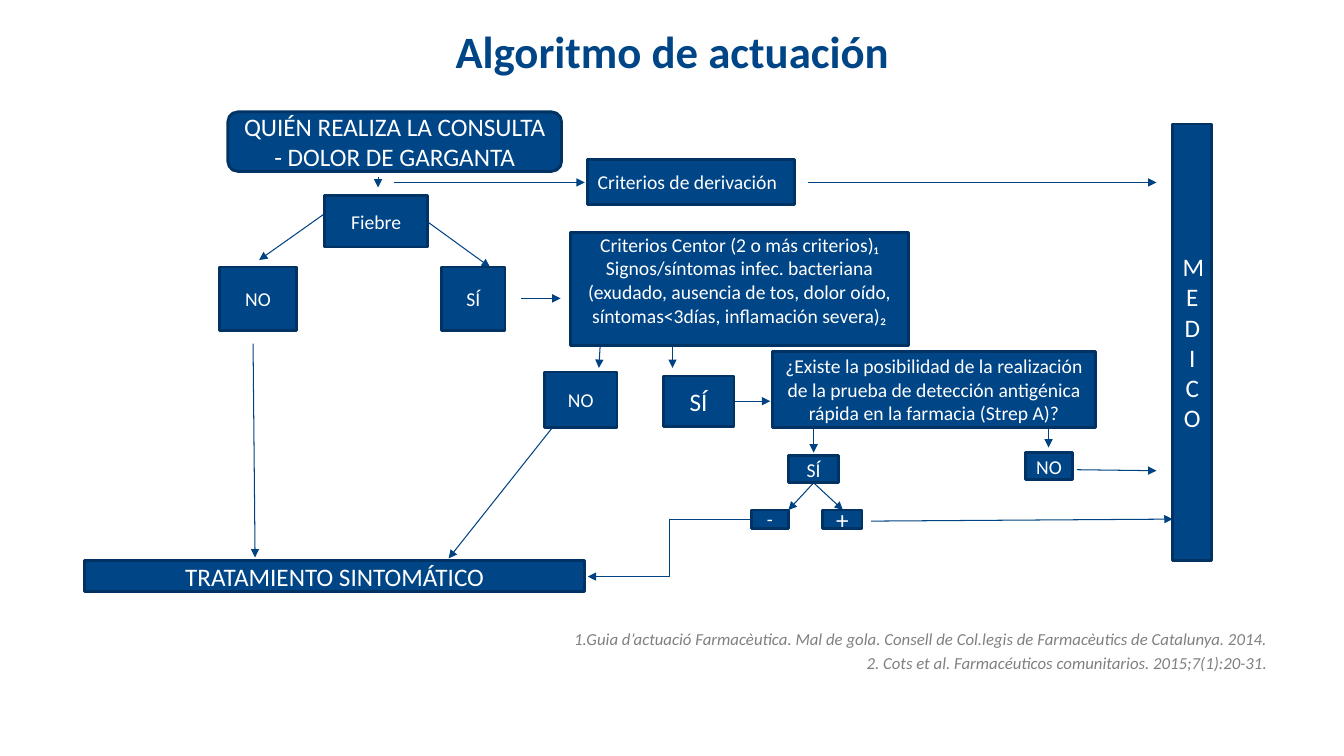
"""Build the decision-flow slide for treating a sore throat."""
import pptx
import pptx.dml.color
import pptx.enum.shapes
import pptx.enum.text
import pptx.oxml.ns
import pptx.util
from lxml import etree

SLIDE_WIDTH, SLIDE_HEIGHT = 13.33, 7.5
COLUMN, ROW = SLIDE_WIDTH / 133.3, SLIDE_HEIGHT / 75
FONT = "Calibri"
BLUE, EDGE, ARROW, WHITE, GREY = "004586", "003363", "004383", "FFFFFF", "808080"
ALIGN = pptx.enum.text.PP_ALIGN
ANCHOR = pptx.enum.text.MSO_ANCHOR
SHAPE = pptx.enum.shapes.MSO_SHAPE
CONNECTOR = pptx.enum.shapes.MSO_CONNECTOR

BOXES = [
    (22.6, 11.1, 33.1, 5.9, "QUIÉN REALIZA LA CONSULTA - DOLOR DE GARGANTA",
     {"size": 18, "kind": SHAPE.ROUNDED_RECTANGLE}),
    (32.2, 19.4, 10.2, 5.1, "Fiebre", {}),
    (58.3, 15.8, 20.5, 4.5, "Criterios de derivación", {"align": ALIGN.JUSTIFY}),
    (21.8, 26.5, 7.6, 6.3, "NO", {}),
    (43.8, 26.5, 6.3, 6.3, "SÍ", {}),
    (56.6, 23.1, 33.5, 11.2,
     "Criterios Centor (2 o más criterios)₁\n"
     "Signos/síntomas infec. bacteriana (exudado, ausencia de tos, dolor oído, "
     "síntomas<3días, inflamación severa)₂", {"anchor": ANCHOR.TOP}),
    (54, 36.9, 7.2, 5.5, "NO", {}),
    (65.8, 37.3, 7, 5, "SÍ", {"size": 18}),
    (76.6, 34.9, 32.1, 7.5,
     "¿Existe la posibilidad de la realización de la prueba de detección "
     "antigénica rápida en la farmacia (Strep A)?", {}),
    (78.2, 45.2, 5, 2.7, "SÍ", {}),
    (101.7, 44.9, 4.7, 2.7, "NO", {}),
    (74.5, 50.6, 3.7, 1.8, "-", {}),
    (81.6, 50.6, 3.9, 1.8, "+", {"size": 18}),
    (116.3, 12.3, 3.9, 43.3, "\n".join("MEDICO"), {"size": 18}),
    (8.4, 55.6, 49.6, 3.1, "TRATAMIENTO SINTOMÁTICO", {"size": 18}),
]

ARROWS = [
    (37.5, 17.6, 37.5, 18.6),
    (39.1, 18.1, 58, 18.1),
    (80.1, 18.1, 114.7, 18.1),
    (42.4, 22, 48.6, 26.5),
    (32.2, 21.2, 25.7, 25.8),
    (25.1, 34.1, 25.3, 55.3),
    (51.7, 29.6, 55.6, 29.6),
    (59.6, 33, 59.4, 36.5),
    (66.7, 33.5, 66.7, 36.5),
    (55.6, 41.4, 44.5, 55.4),
    (72.8, 39.8, 76.4, 39.8),
    (80.7, 42.4, 80.7, 44.9),
    (104, 42.3, 104, 44.4),
    (106.8, 46.6, 114.7, 46.7),
    (80.7, 47.9, 78.2, 50.6),
    (80.7, 47.9, 83.6, 50.6),
    (86.4, 51.7, 116.3, 51.5),
]


def color(value):
    """Turn a hex string into a colour."""
    return pptx.dml.color.RGBColor.from_string(value)


def grid(*lengths):
    """Turn alternating columns and rows into slide lengths."""
    return [pptx.util.Inches(length * (ROW if index % 2 else COLUMN))
            for index, length in enumerate(lengths)]


def write(shape, text, size=14, fill=WHITE, align=ALIGN.CENTER,
          anchor=ANCHOR.MIDDLE, bold=False, italic=False, gap=0):
    """Fill a shape with formatted text, one paragraph for each line."""
    frame = shape.text_frame
    frame.text = text
    frame.word_wrap = True
    frame.auto_size = pptx.enum.text.MSO_AUTO_SIZE.NONE
    frame.vertical_anchor = anchor
    for index, paragraph in enumerate(frame.paragraphs):
        properties = paragraph._p.get_or_add_pPr()
        properties.set("marL", "0")
        properties.set("indent", "0")
        etree.SubElement(properties, pptx.oxml.ns.qn("a:buNone"))
        paragraph.alignment = align
        paragraph.space_before = pptx.util.Pt(gap if index else 0)
        font = paragraph.font
        font.name, font.size = FONT, pptx.util.Pt(size)
        font.bold, font.italic = bold, italic
        font.color.rgb = color(fill)


def fill_placeholder(shape, position, text, **style):
    """Move a placeholder on the grid and write its text."""
    shape.left, shape.top, shape.width, shape.height = grid(*position)
    write(shape, text, **style)


def add_box(slide, position, text, kind=SHAPE.RECTANGLE, **style):
    """Draw one step of the flow."""
    shape = slide.shapes.add_shape(kind, *grid(*position))
    shape.shadow.inherit = False
    shape.fill.solid()
    shape.fill.fore_color.rgb = color(BLUE)
    shape.line.color.rgb = color(EDGE)
    shape.line.width = pptx.util.Pt(2)
    write(shape, text, **style)
    if style.get("anchor") == ANCHOR.TOP:
        shape.text_frame.margin_top = 0


def add_arrow(slide, position, kind=CONNECTOR.STRAIGHT):
    """Draw a thin line with an arrowhead at its end."""
    connector = slide.shapes.add_connector(kind, *grid(*position))
    connector.line.color.rgb = color(ARROW)
    connector.line.width = pptx.util.Pt(0.75)
    line = connector.line._get_or_add_ln()
    etree.SubElement(line, pptx.oxml.ns.qn("a:tailEnd"), type="triangle")
    etree.SubElement(connector._element.spPr, pptx.oxml.ns.qn("a:effectLst"))


def main():
    """Build and save the slide."""
    presentation = pptx.Presentation()
    presentation.slide_width = pptx.util.Inches(SLIDE_WIDTH)
    presentation.slide_height = pptx.util.Inches(SLIDE_HEIGHT)
    slide = presentation.slides.add_slide(presentation.slide_layouts[1])
    fill_placeholder(slide.shapes.title, (6.7, 1.7, 120, 6.6),
                     "Algoritmo de actuación", size=32, fill=BLUE, bold=True)
    fill_placeholder(
        slide.placeholders[1], (0, 61.9, 126.7, 3.2),
        "1.Guia d’actuació Farmacèutica. Mal de gola. Consell de Col.legis de "
        "Farmacèutics de Catalunya. 2014.\n"
        "2. Cots et al. Farmacéuticos comunitarios. 2015;7(1):20-31.",
        size=12, fill=GREY, italic=True, align=ALIGN.RIGHT,
        anchor=ANCHOR.TOP, gap=2.4)
    for arrow in ARROWS:
        add_arrow(slide, arrow)
    add_arrow(slide, (74.5, 51.5, 58.3, 57.2), kind=CONNECTOR.ELBOW)
    for *position, text, style in BOXES:
        add_box(slide, position, text, **style)
    presentation.save("out.pptx")


if __name__ == "__main__":
    main()
